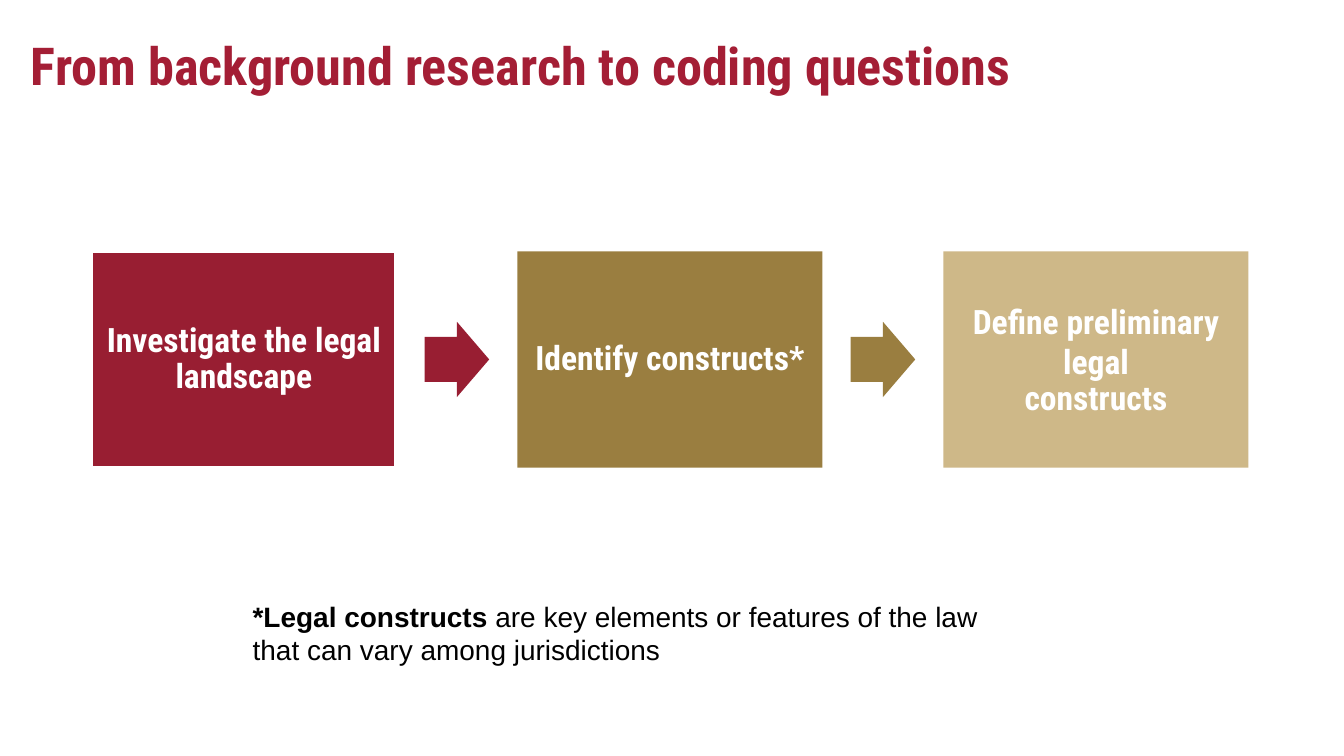
from pptx import Presentation
from pptx.dml.color import RGBColor
from pptx.enum.shapes import MSO_SHAPE
from pptx.enum.text import MSO_ANCHOR, PP_ALIGN
from pptx.util import Inches, Pt

RECTANGLE = MSO_SHAPE.RECTANGLE
RIGHT_ARROW = MSO_SHAPE.RIGHT_ARROW
TOP, MIDDLE = MSO_ANCHOR.TOP, MSO_ANCHOR.MIDDLE
LEFT, CENTER = PP_ALIGN.LEFT, PP_ALIGN.CENTER
TITLE_ONLY = 5

COLORS = {
    "title": "A41E35",
    "crimson": "981E32",
    "bronze": "9A7E40",
    "sand": "CEB888",
    "white": "FFFFFF",
    "black": "000000",
}
HEADING_FONT = "Roboto Condensed"
BODY_FONT = "Arial"

SLIDE_WIDTH = 10
SLIDE_HEIGHT = SLIDE_WIDTH * 9 / 16
STEPS = [
    (["Investigate the legal landscape"], "crimson"),
    (["Identify constructs*"], "bronze"),
    (["Define preliminary legal", "constructs"], "sand"),
]
STEP_LEFT, STEP_TOP, STEP_WIDTH, STEP_HEIGHT = 0.68, 1.87, 2.27, 1.61
STEP_PITCH = 3.17
ARROW_WIDTH, ARROW_HEIGHT = 0.48, 0.56
ARROW_OFFSET = 2.48


class SlideBuilder:
    def __init__(self, slide):
        self.slide = slide

    def color(self, name):
        return RGBColor.from_string(COLORS[name])

    def style_run(self, run, size, color, font=HEADING_FONT, bold=True):
        run.font.name = font
        run.font.size = Pt(size)
        run.font.bold = bold
        run.font.color.rgb = self.color(color)

    def frame(self, shape, anchor, inset_x=0.1, inset_y=0.1):
        text_frame = shape.text_frame
        text_frame.word_wrap = True
        text_frame.vertical_anchor = anchor
        text_frame.margin_left = text_frame.margin_right = Inches(inset_x)
        text_frame.margin_top = text_frame.margin_bottom = Inches(inset_y)
        return text_frame

    def title(self, text, left, top, width, height):
        heading = self.slide.shapes.title
        heading.left, heading.top = Inches(left), Inches(top)
        heading.width, heading.height = Inches(width), Inches(height)
        text_frame = self.frame(heading, TOP)
        text_frame.text = text
        text_frame.paragraphs[0].alignment = LEFT
        self.style_run(text_frame.paragraphs[0].runs[0], 28, "title")

    def block(self, kind, left, top, width, height, fill):
        shape = self.slide.shapes.add_shape(
            kind, Inches(left), Inches(top), Inches(width), Inches(height))
        shape.shadow.inherit = False
        shape.fill.solid()
        shape.fill.fore_color.rgb = self.color(fill)
        shape.line.fill.background()
        return shape

    def step(self, lines, left, fill, outlined):
        box = self.block(RECTANGLE, left, STEP_TOP, STEP_WIDTH, STEP_HEIGHT, fill)
        if outlined:
            box.line.color.rgb = self.color("white")
            box.line.width = Pt(2)
        text_frame = self.frame(box, MIDDLE)
        text_frame.text = "\n".join(lines)
        for paragraph in text_frame.paragraphs:
            paragraph.alignment = CENTER
            self.style_run(paragraph.runs[0], 18, "white")
        closing = text_frame.paragraphs[-1]
        closing.line_spacing = 0.9
        closing.space_after = Pt(6.3)

    def arrow(self, left, fill):
        top = STEP_TOP + (STEP_HEIGHT - ARROW_HEIGHT) / 2
        arrow = self.block(RIGHT_ARROW, left, top, ARROW_WIDTH, ARROW_HEIGHT, fill)
        arrow.adjustments[0] = 0.6
        arrow.adjustments[1] = 0.5

    def note(self, term, definition, left, top, width, height):
        box = self.slide.shapes.add_textbox(
            Inches(left), Inches(top), Inches(width), Inches(height))
        paragraph = self.frame(box, TOP, 0.07, 0.04).paragraphs[0]
        for text, bold in ((term, True), (definition, False)):
            run = paragraph.add_run()
            run.text = text
            self.style_run(run, 15, "black", BODY_FONT, bold)


def main():
    deck = Presentation()
    deck.slide_width, deck.slide_height = Inches(SLIDE_WIDTH), Inches(SLIDE_HEIGHT)
    builder = SlideBuilder(deck.slides.add_slide(deck.slide_layouts[TITLE_ONLY]))

    builder.title("From background research to coding questions", 0.13, 0.15, 9.16, 0.63)
    for index, (lines, fill) in enumerate(STEPS):
        left = STEP_LEFT + index * STEP_PITCH
        builder.step(lines, left, fill, outlined=index == 0)
        if index < len(STEPS) - 1:
            builder.arrow(left + ARROW_OFFSET, fill)
    builder.note(
        "*Legal constructs",
        " are key elements or features of the law that can vary among jurisdictions",
        1.81, 4.42, 5.89, 0.58)

    deck.save("out.pptx")


if __name__ == "__main__":
    main()
